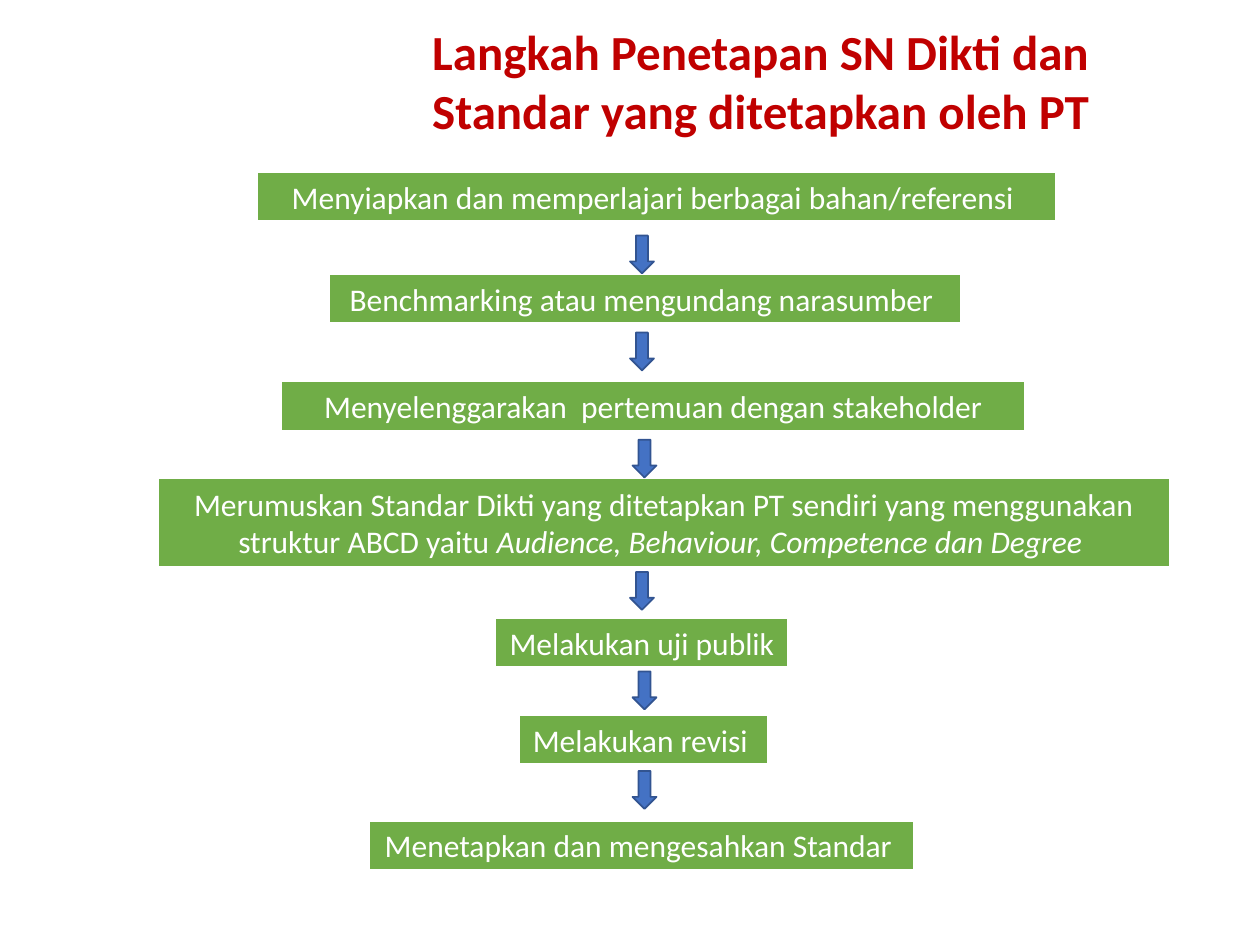
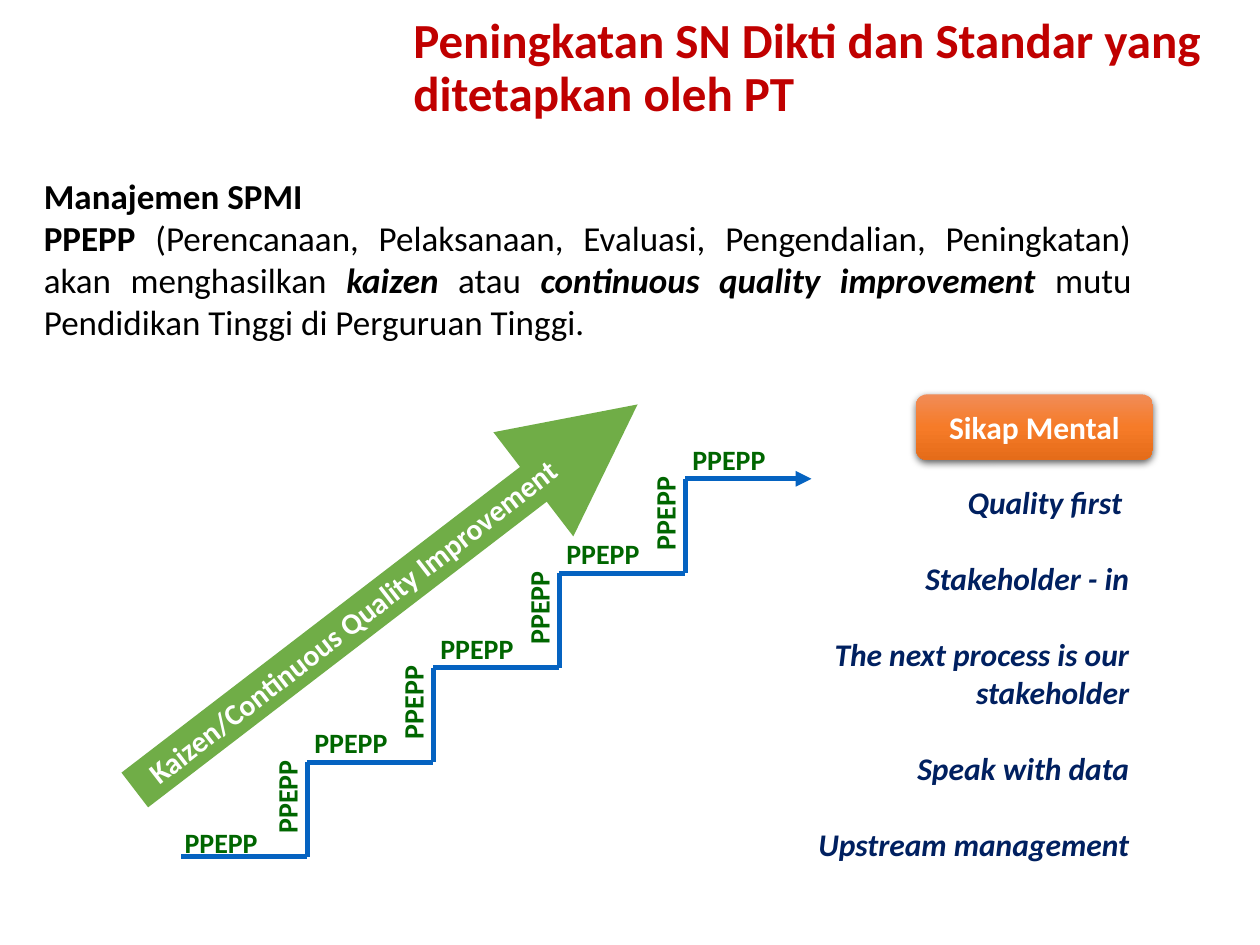
from copy import deepcopy
from dataclasses import dataclass

from lxml.etree import SubElement
from pptx import Presentation
from pptx.dml.color import RGBColor
from pptx.enum.shapes import MSO_CONNECTOR, MSO_SHAPE
from pptx.enum.text import MSO_ANCHOR, MSO_AUTO_SIZE, PP_ALIGN
from pptx.oxml.ns import qn
from pptx.util import Inches, Pt

# Shared look
FONT = "Calibri"
TITLE_ONLY = 5
COLORS = {
    "title": "C00000",
    "step": "70AD47",
    "arrow": "4472C4",
    "arrow_edge": "325491",
    "stair": "0563C1",
    "stair_label": "006600",
    "attitude": "002060",
    "black": "000000",
    "white": "FFFFFF",
}
BADGE_GRADIENT = ((0, "F18C57"), (50, "F67B28"), (100, "E56C19"))


@dataclass
class Span:
    text: str
    bold: bool = False
    italic: bool = False


@dataclass
class Area:
    left: float
    top: float
    width: float
    height: float

    def lengths(self) -> tuple:
        return tuple(Inches(n) for n in (self.left, self.top, self.width, self.height))


@dataclass
class Step:
    area: Area
    spans: list
    wraps: bool = True


# Slide 1 content
STEPS = [
    Step(Area(2.04, 1.36, 6.34, 0.4),
         [Span("Menyiapkan dan memperlajari berbagai bahan/referensi ")]),
    Step(Area(2.61, 2.17, 5.02, 0.4),
         [Span("Benchmarking atau mengundang narasumber ")]),
    Step(Area(2.23, 3.02, 5.91, 0.4),
         [Span("Menyelenggarakan  pertemuan dengan stakeholder")]),
    Step(Area(1.25, 3.79, 8.04, 0.71),
         [Span("Merumuskan Standar Dikti yang ditetapkan PT sendiri yang "
               "menggunakan struktur ABCD yaitu "),
          Span("Audience, Behaviour, Competence dan Degree ", italic=True)]),
    Step(Area(3.93, 4.9, 2.33, 0.4), [Span("Melakukan uji publik")], wraps=False),
    Step(Area(4.12, 5.67, 1.98, 0.4), [Span("Melakukan revisi ")], wraps=False),
    Step(Area(2.93, 6.51, 4.33, 0.4),
         [Span("Menetapkan dan mengesahkan Standar ")], wraps=False),
]
ARROW_CORNERS = [(5, 1.87), (5, 2.64), (5.02, 3.49), (5, 4.54), (5.02, 5.33), (5.02, 6.12)]

# Slide 2 content
MANAGEMENT = [
    [Span("Manajemen SPMI", bold=True)],
    [Span("PPEPP ", bold=True),
     Span("(Perencanaan, Pelaksanaan, Evaluasi, Pengendalian, Peningkatan) "
          "akan menghasilkan "),
     Span("kaizen ", bold=True, italic=True),
     Span("atau "),
     Span("continuous quality improvement ", bold=True, italic=True),
     Span("mutu Pendidikan Tinggi di Perguruan Tinggi.")],
]
ATTITUDES = ["Quality first ", "Stakeholder - in", "The next process is our stakeholder",
             "Speak with data", "Upstream management"]
STAIR_COUNT = 5
STAIR_LEFT, STAIR_BOTTOM = 1.44, 6.8
STAIR_RUN, STAIR_RISE = 1, 0.75


def color(name: str) -> RGBColor:
    return RGBColor.from_string(COLORS[name])


def fill_paragraph(para, spans: list, size: float, ink: str, align=PP_ALIGN.LEFT) -> None:
    para.alignment = align
    for span in spans:
        run = para.add_run()
        run.text = span.text
        run.font.name = FONT
        run.font.size = Pt(size)
        run.font.bold = span.bold
        run.font.italic = span.italic
        run.font.color.rgb = color(ink)


def fill_frame(frame, paragraphs: list, size: float, ink: str,
               align=PP_ALIGN.LEFT, gap: float = 0) -> None:
    for index, spans in enumerate(paragraphs):
        para = frame.add_paragraph() if index else frame.paragraphs[0]
        if index:
            para.space_before = Pt(gap)
        fill_paragraph(para, spans, size, ink, align)


def add_page(deck, title: str, area: Area, line_spacing: float):
    page = deck.slides.add_slide(deck.slide_layouts[TITLE_ONLY])
    box = page.shapes.title
    box.left, box.top, box.width, box.height = area.lengths()
    frame = box.text_frame
    frame.word_wrap = True
    frame.auto_size = MSO_AUTO_SIZE.NONE
    frame.vertical_anchor = MSO_ANCHOR.TOP
    fill_frame(frame, [[Span(title, bold=True)]], 28, "title")
    frame.paragraphs[0].line_spacing = line_spacing
    return page


def add_text(page, area: Area, paragraphs: list, size: float, ink: str,
             align=PP_ALIGN.LEFT, gap: float = 0, wraps: bool = True, rotation: float = 0):
    box = page.shapes.add_textbox(*area.lengths())
    box.rotation = rotation
    box.text_frame.word_wrap = wraps
    fill_frame(box.text_frame, paragraphs, size, ink, align, gap)
    return box


def add_block(page, kind, area: Area, fill: str, edge: str, edge_width: float):
    block = page.shapes.add_shape(kind, *area.lengths())
    block.shadow.inherit = False
    block.fill.solid()
    block.fill.fore_color.rgb = color(fill)
    block.line.color.rgb = color(edge)
    block.line.width = Pt(edge_width)
    return block


def add_line(page, start: tuple, end: tuple, ink: str, width: float, arrow: bool = False) -> None:
    line = page.shapes.add_connector(
        MSO_CONNECTOR.STRAIGHT, *(Inches(n) for n in (*start, *end)))
    line.line.color.rgb = color(ink)
    line.line.width = Pt(width)
    properties = line._element.spPr
    if arrow:
        SubElement(properties.find(qn("a:ln")), qn("a:tailEnd"), type="triangle")
    SubElement(properties, qn("a:effectLst"))


def add_badge(page, area: Area, text: str) -> None:
    badge = page.shapes.add_shape(MSO_SHAPE.ROUNDED_RECTANGLE, *area.lengths())
    badge.line.fill.background()
    badge.shadow.inherit = False
    properties = badge._element.spPr
    # Three-stop gradient running downwards
    badge.fill.gradient()
    badge.fill.gradient_angle = 270
    stop_list = properties.find(".//" + qn("a:gsLst"))
    stop_list.insert(1, deepcopy(stop_list[0]))
    for stop, (percent, tone) in zip(badge.fill.gradient_stops, BADGE_GRADIENT):
        stop.position = percent / 100
        stop.color.rgb = RGBColor.from_string(tone)
    # Soft shadow below
    shadow = SubElement(properties.find(qn("a:effectLst")), qn("a:outerShdw"),
                        blurRad=str(Pt(4.5)), dist=str(Pt(1.5)), dir="5400000", rotWithShape="0")
    tint = SubElement(shadow, qn("a:srgbClr"), val=COLORS["black"])
    SubElement(tint, qn("a:alpha"), val="63000")
    badge.text_frame.vertical_anchor = MSO_ANCHOR.MIDDLE
    fill_frame(badge.text_frame, [[Span(text, bold=True)]], 18, "white", PP_ALIGN.CENTER)


def add_stair_label(page, left: float, top: float, rotation: float = 0) -> None:
    add_text(page, Area(left, top, 0.79, 0.37), [[Span("PPEPP", bold=True)]], 16,
             "stair_label", PP_ALIGN.CENTER, wraps=False, rotation=rotation)


def add_staircase(page) -> None:
    for index in range(STAIR_COUNT):
        last = index == STAIR_COUNT - 1
        left = STAIR_LEFT + index * STAIR_RUN
        right = left + STAIR_RUN
        level = STAIR_BOTTOM - index * STAIR_RISE
        add_line(page, (left, level), (right, level), "stair", 3, arrow=last)
        if index:
            add_stair_label(page, left - 0.05, level - 0.34)
        else:
            add_stair_label(page, left - 0.08, level - 0.3)
        if not last:
            add_line(page, (right, level - STAIR_RISE), (right, level), "stair", 3)
            add_stair_label(page, left + 0.44, level - 0.66, rotation=270)


def build_steps_page(deck) -> None:
    page = add_page(deck, "Langkah Penetapan SN Dikti dan Standar yang ditetapkan oleh PT",
                    Area(3.33, 0.12, 6.67, 1.04), 1.0)
    for step in STEPS:
        block = add_block(page, MSO_SHAPE.RECTANGLE, step.area, "step", "white", 1.5)
        block.text_frame.word_wrap = step.wraps
        fill_frame(block.text_frame, [step.spans], 18, "white", PP_ALIGN.CENTER)
    for left, top in ARROW_CORNERS:
        add_block(page, MSO_SHAPE.DOWN_ARROW, Area(left, top, 0.19, 0.3),
                  "arrow", "arrow_edge", 1)


def build_improvement_page(deck) -> None:
    page = add_page(deck, "Peningkatan SN Dikti dan Standar yang ditetapkan oleh PT",
                    Area(3.18, 0.08, 6.8, 0.95), 0.9)
    management = add_text(page, Area(0.25, 1.33, 8.83, 1.45), MANAGEMENT, 20, "black",
                          PP_ALIGN.JUSTIFY)
    management.text_frame.vertical_anchor = MSO_ANCHOR.MIDDLE
    add_staircase(page)
    # Rising arrow with its caption
    add_line(page, (1.07, 6.27), (5.06, 3.21), "step", 25, arrow=True)
    add_text(page, Area(0.67, 4.68, 4.41, 0.39),
             [[Span("Kaizen/Continuous Quality Improvement", bold=True)]], 17, "white",
             rotation=322.2)
    # Mental attitudes
    add_badge(page, Area(7.27, 3.13, 1.88, 0.52), "Sikap Mental")
    attitudes = add_text(page, Area(5.47, 3.83, 3.59, 3.04),
                         [[Span(text, bold=True, italic=True)] for text in ATTITUDES],
                         18, "attitude", PP_ALIGN.RIGHT, gap=22)
    attitudes.text_frame.margin_top = attitudes.text_frame.margin_bottom = 0


def main() -> None:
    deck = Presentation()
    deck.slide_width, deck.slide_height = Inches(10), Inches(7.5)
    build_steps_page(deck)
    build_improvement_page(deck)
    deck.save("out.pptx")


if __name__ == "__main__":
    main()
